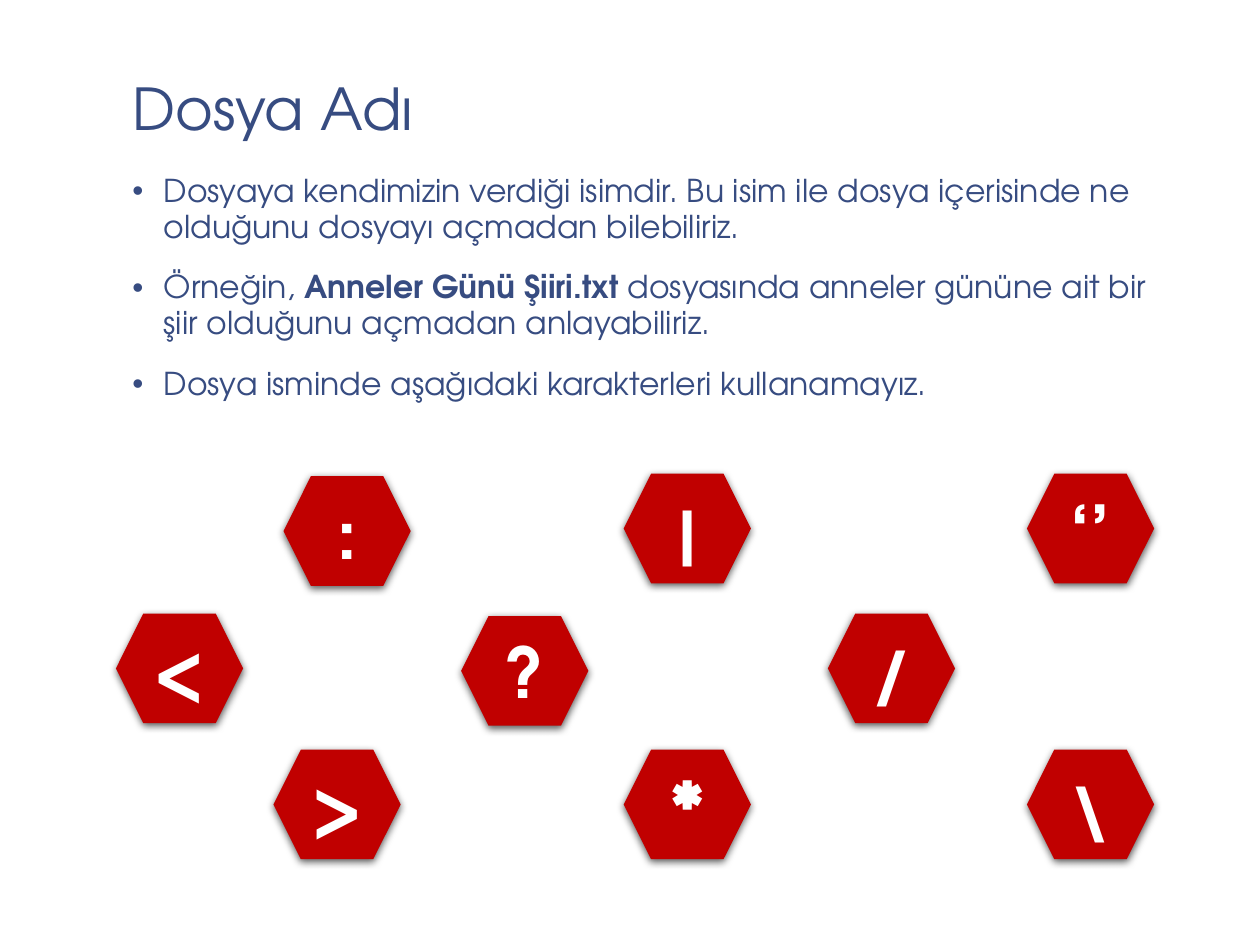
from dataclasses import dataclass

from lxml import etree
from pptx import Presentation, util as u
from pptx.dml.color import RGBColor
from pptx.enum import shapes, text
from pptx.oxml import ns

COLORS = {"ink": "374C81", "hexagon": "C00000", "symbol": "FFFFFF", "shadow": "000000"}
FONT = "TeX Gyre Adventor"
HEX_W, HEX_H = 1.01, 0.87


@dataclass(frozen=True)
class Symbol:
    """A forbidden character and the top-left corner of its hexagon."""
    char: str
    left: float
    top: float


SYMBOLS = [
    Symbol("<", 0.92, 4.87), Symbol(">", 2.17, 5.95), Symbol("?", 3.66, 4.89),
    Symbol("*", 4.95, 5.95), Symbol("/", 6.57, 4.87), Symbol("\\", 8.15, 5.95),
    Symbol(":", 2.25, 3.78), Symbol("|", 4.95, 3.76), Symbol("‘’", 8.15, 3.76),
]

BULLETS = [
    [("Dosyaya kendimizin verdiği isimdir. Bu isim ile dosya içerisinde ne "
      "olduğunu dosyayı açmadan bilebiliriz.", False)],
    [("Örneğin, ", False), ("Anneler Günü Şiiri.txt ", True),
     ("dosyasında anneler gününe ait bir şiir olduğunu açmadan anlayabiliriz.", False)],
    [("Dosya isminde aşağıdaki karakterleri kullanamayız.", False)],
]


def add_run(p, content: str, *, size: float, color: str, bold: bool = False) -> None:
    """Append a formatted run to a paragraph."""
    r = p.add_run()
    r.text = content
    r.font.name = FONT
    r.font.size = u.Pt(size)
    r.font.bold = bold
    r.font.color.rgb = RGBColor.from_string(COLORS[color])


def add_box(s, top: float, height: float, anchor):
    """Add a wrapping text box in the text column and return its frame."""
    sp = s.shapes.add_textbox(u.Inches(0.92), u.Inches(top), u.Inches(8.33), u.Inches(height))
    tf = sp.text_frame
    tf.word_wrap = True
    tf.vertical_anchor = anchor
    tf.margin_left = tf.margin_right = u.Inches(0.13)
    tf.margin_top = tf.margin_bottom = u.Inches(0.07)
    return tf


def add_bullet(p) -> None:
    """Give a paragraph a round bullet with a hanging indent."""
    pPr = p._p.get_or_add_pPr()
    pPr.set("marL", str(u.Inches(0.25)))
    pPr.set("indent", str(u.Inches(-0.25)))
    etree.SubElement(pPr, ns.qn("a:buFont"), typeface="Arial")
    etree.SubElement(pPr, ns.qn("a:buChar"), char="•")


def add_shadow(sp) -> None:
    """Give a shape a soft shadow below it."""
    sp.shadow.inherit = False
    effects = sp._element.spPr.find(ns.qn("a:effectLst"))
    outer = etree.SubElement(effects, ns.qn("a:outerShdw"), blurRad=str(u.Pt(4.5)),
                             dist=str(u.Pt(1.5)), dir="5400000", algn="ctr", rotWithShape="0")
    color = etree.SubElement(outer, ns.qn("a:srgbClr"), val=COLORS["shadow"])
    etree.SubElement(color, ns.qn("a:alpha"), val="63000")


def add_symbol(s, symbol: Symbol) -> None:
    """Draw one hexagon with its character."""
    sp = s.shapes.add_shape(shapes.MSO_SHAPE.HEXAGON, u.Inches(symbol.left),
                            u.Inches(symbol.top), u.Inches(HEX_W), u.Inches(HEX_H))
    sp.fill.solid()
    sp.fill.fore_color.rgb = RGBColor.from_string(COLORS["hexagon"])
    sp.line.fill.background()
    add_shadow(sp)
    tf = sp.text_frame
    tf.vertical_anchor = text.MSO_ANCHOR.MIDDLE
    p = tf.paragraphs[0]
    p.alignment = text.PP_ALIGN.CENTER
    add_run(p, symbol.char, size=40, color="symbol", bold=True)


def main() -> None:
    """Build and save the slide."""
    prs = Presentation()
    prs.slide_width, prs.slide_height = u.Inches(10), u.Inches(7.5)
    s = prs.slides.add_slide(prs.slide_layouts[6])

    title = add_box(s, 0.08, 1.12, text.MSO_ANCHOR.BOTTOM).paragraphs[0]
    title.line_spacing = 0.85
    add_run(title, "Dosya Adı", size=33, color="ink")

    body = add_box(s, 1.31, 2.05, text.MSO_ANCHOR.TOP)
    for i, runs in enumerate(BULLETS):
        p = body.add_paragraph() if i else body.paragraphs[0]
        add_bullet(p)
        p.line_spacing = 0.95
        p.space_before = u.Pt(14 if i else 0)
        for content, bold in runs:
            add_run(p, content, size=18, color="ink", bold=bold)

    for symbol in SYMBOLS:
        add_symbol(s, symbol)
    prs.save("out.pptx")


if __name__ == "__main__":
    main()
